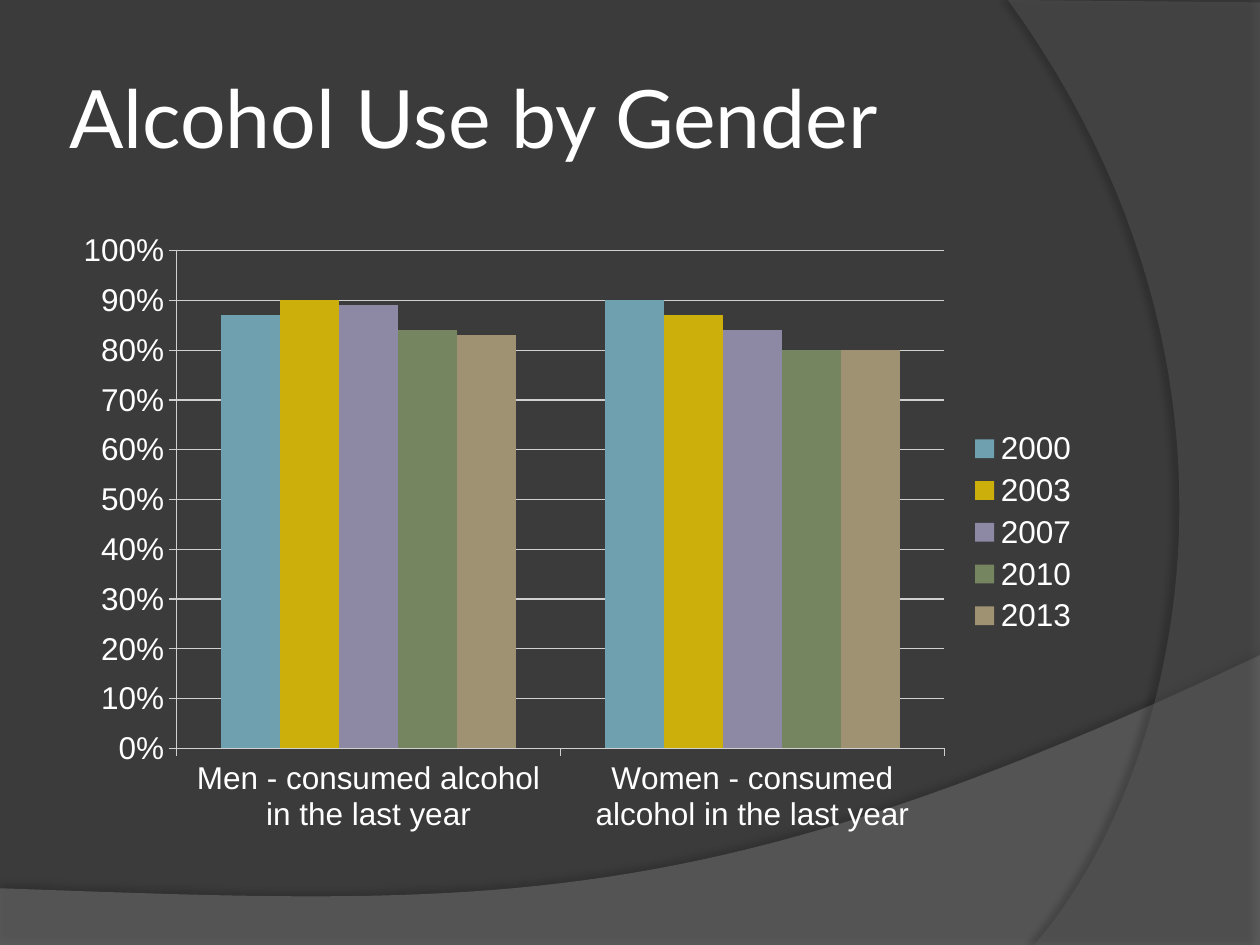
from lxml import etree
from pptx import Presentation
from pptx.chart.data import CategoryChartData
from pptx.dml.color import RGBColor
from pptx.enum.chart import XL_CHART_TYPE, XL_LEGEND_POSITION, XL_TICK_MARK
from pptx.enum.text import MSO_ANCHOR, PP_ALIGN
from pptx.oxml.ns import qn
from pptx.util import Pt

COLUMNS = XL_CHART_TYPE.COLUMN_CLUSTERED
LEGEND_RIGHT = XL_LEGEND_POSITION.RIGHT
TICK_OUTSIDE = XL_TICK_MARK.OUTSIDE
MIDDLE = MSO_ANCHOR.MIDDLE
LEFT = PP_ALIGN.LEFT

WIDTH, HEIGHT = 720, 540
TITLE_ONLY_LAYOUT = 5
CURVE_STEPS = 48
COLORS = {
    "background": "3B3B3B",
    "text": "FFFFFF",
    "axis": "D0D0D0",
    "wave": "7F7F7F",
    "arc": "5E5E5E",
    "shadow": "000000",
}
CATEGORIES = ["Men - consumed alcohol in the last year",
              "Women - consumed alcohol in the last year"]
SERIES = [
    ("2000", (0.87, 0.90), "6EA0B0"),
    ("2003", (0.90, 0.87), "CCAF0A"),
    ("2007", (0.89, 0.84), "8D89A4"),
    ("2010", (0.84, 0.80), "748560"),
    ("2013", (0.83, 0.80), "9E9273"),
]


def rgb(value):
    return RGBColor.from_string(value)


def bezier(start, control_1, control_2, end):
    """Return points along a cubic curve, both ends included."""
    points = []
    for step in range(CURVE_STEPS + 1):
        t = step / CURVE_STEPS
        weights = ((1 - t) ** 3, 3 * t * (1 - t) ** 2, 3 * t * t * (1 - t), t ** 3)
        corners = (start, control_1, control_2, end)
        points.append(tuple(sum(w * c[axis] for w, c in zip(weights, corners))
                            for axis in (0, 1)))
    return points


def write_text(frame, text, *, font, size, color, align=LEFT, anchor=MIDDLE, inset=3.6):
    frame.word_wrap = True
    frame.vertical_anchor = anchor
    frame.margin_left = frame.margin_right = Pt(inset)
    frame.margin_top = frame.margin_bottom = Pt(inset)
    paragraph = frame.paragraphs[0]
    paragraph.alignment = align
    run = paragraph.add_run()
    run.text = text
    run.font.name = font
    run.font.size = Pt(size)
    run.font.color.rgb = rgb(color)


def set_alpha(color_element, percent):
    etree.SubElement(color_element, qn("a:alpha"), val=str(percent * 1000))


def add_shadow(shape, color, opacity, blur, distance, angle):
    shape.shadow.inherit = False
    effects = shape.element.spPr.find(qn("a:effectLst"))
    shadow = etree.SubElement(
        effects, qn("a:outerShdw"), blurRad=str(Pt(blur)), dist=str(Pt(distance)),
        dir=str(angle * 60000), algn="ctr", rotWithShape="0")
    set_alpha(etree.SubElement(shadow, qn("a:srgbClr"), val=color), opacity)


class SlideBuilder:
    """Holds the style and the current slide."""

    def __init__(self, presentation, title_font="Lato", chart_font="Arial"):
        self.title_font = title_font
        self.chart_font = chart_font
        self.slide = presentation.slides.add_slide(
            presentation.slide_layouts[TITLE_ONLY_LAYOUT])
        fill = self.slide.background.fill
        fill.solid()
        fill.fore_color.rgb = rgb(COLORS["background"])

    def title(self, text, left, top, width, height):
        shape = self.slide.shapes.title
        shape.left, shape.top = Pt(left), Pt(top)
        shape.width, shape.height = Pt(width), Pt(height)
        write_text(shape.text_frame, text, font=self.title_font, size=46,
                   color=COLORS["text"])

    def backdrop(self, points, color, opacity, shadow):
        """Add a translucent outline behind everything added before the title."""
        vertices = [(Pt(x), Pt(y)) for x, y in points]
        builder = self.slide.shapes.build_freeform(*vertices[0])
        builder.add_line_segments(vertices[1:], close=True)
        shape = builder.convert_to_shape()
        shape.line.fill.background()
        shape.fill.solid()
        shape.fill.fore_color.rgb = rgb(color)
        set_alpha(shape.element.spPr.find(qn("a:solidFill"))[0], opacity)
        add_shadow(shape, COLORS["shadow"], *shadow)
        self.slide.shapes.title.element.addprevious(shape.element)

    def column_chart(self, left, top, width, height):
        data = CategoryChartData(number_format="0%")
        data.categories = CATEGORIES
        for name, values, _ in SERIES:
            data.add_series(name, values)
        chart = self.slide.shapes.add_chart(
            COLUMNS, Pt(left), Pt(top), Pt(width), Pt(height), data).chart
        chart.has_title = False
        chart.font.name = self.chart_font
        chart.font.size = Pt(18)
        chart.font.color.rgb = rgb(COLORS["text"])
        chart.has_legend = True
        chart.legend.position = LEGEND_RIGHT
        chart.legend.include_in_layout = False

        plot = chart.plots[0]
        plot.gap_width = 150
        plot.overlap = 0
        plot.vary_by_categories = False
        for series, (_, _, color) in zip(plot.series, SERIES):
            series.format.fill.solid()
            series.format.fill.fore_color.rgb = rgb(color)

        value_axis = chart.value_axis
        value_axis.minimum_scale, value_axis.maximum_scale = 0, 1
        value_axis.major_unit = 0.1
        value_axis.has_major_gridlines = True
        value_axis.tick_labels.number_format = "0%"
        value_axis.tick_labels.number_format_is_linked = False
        for axis in (value_axis, chart.category_axis):
            axis.major_tick_mark = TICK_OUTSIDE
        for part in (value_axis, chart.category_axis, value_axis.major_gridlines):
            part.format.line.color.rgb = rgb(COLORS["axis"])
            part.format.line.width = Pt(0.75)


def main():
    presentation = Presentation()
    presentation.slide_width, presentation.slide_height = Pt(WIDTH), Pt(HEIGHT)
    builder = SlideBuilder(presentation)

    wave = [(0, HEIGHT), (WIDTH, HEIGHT)]
    wave += bezier((WIDTH, 374.4), (402.5, 524.9), (281.5, 517.7), (0, 507.6))
    builder.backdrop(wave, COLORS["wave"], 45, shadow=(35, 4, 3.5, 270))

    arc = [(WIDTH, 1.4), (WIDTH, HEIGHT)]
    arc += bezier((591, HEIGHT), (673.2, 445.7), (733, 216), (576, 0))
    builder.backdrop(arc, COLORS["arc"], 40, shadow=(45, 4, 4, 180))

    builder.title("Alcohol Use by Gender", 36, 21.6, 588, 90)
    builder.column_chart(36, 126, 588, 356.4)
    presentation.save("out.pptx")


if __name__ == "__main__":
    main()
